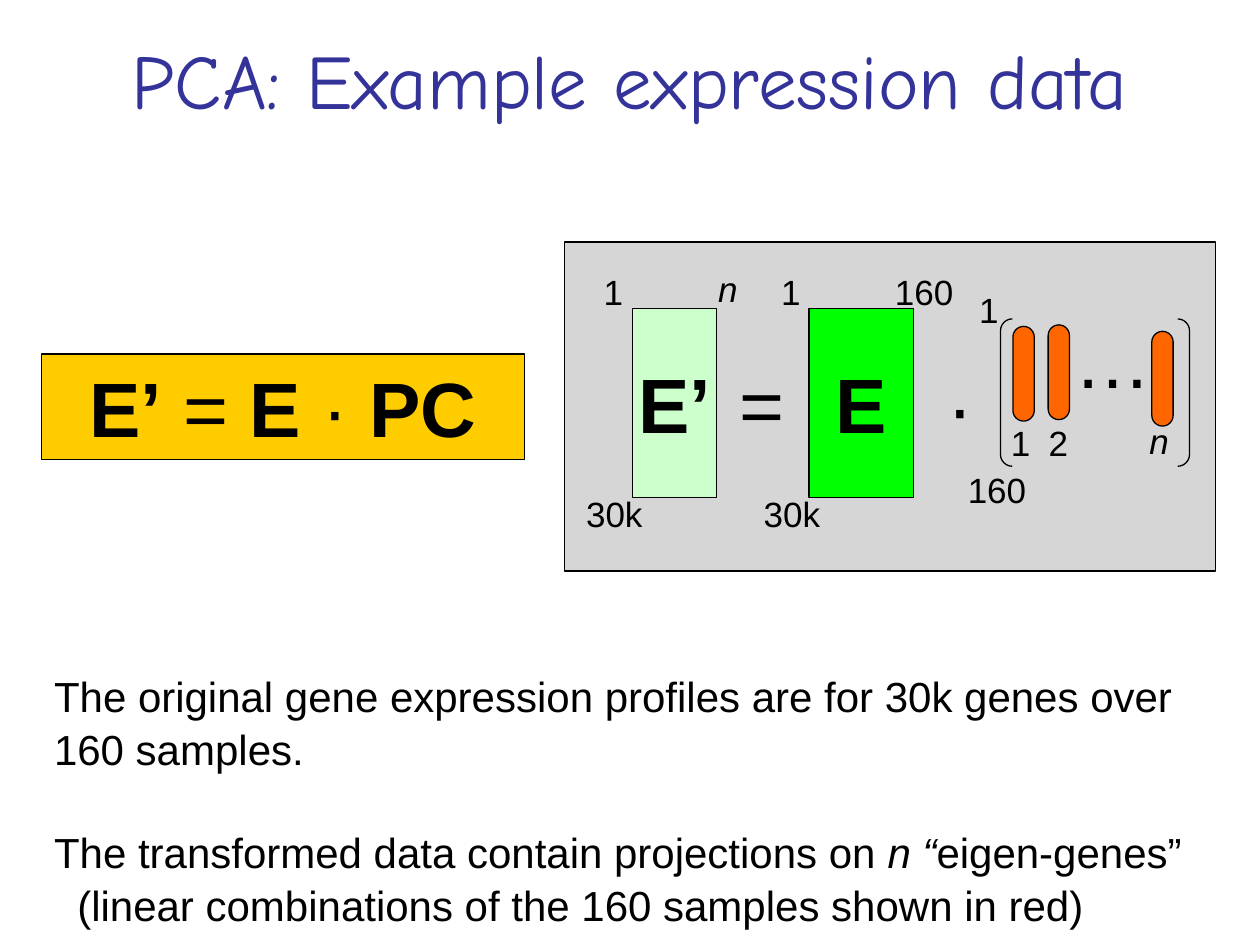
from lxml import etree
from pptx import Presentation
from pptx.dml.color import RGBColor
from pptx.enum.shapes import MSO_SHAPE
from pptx.enum.text import MSO_ANCHOR, MSO_AUTO_SIZE, PP_ALIGN
from pptx.oxml.ns import qn
from pptx.util import Cm, Pt

RECTANGLE = MSO_SHAPE.RECTANGLE
ROUNDED = MSO_SHAPE.ROUNDED_RECTANGLE
BRACKETS = MSO_SHAPE.DOUBLE_BRACKET
TOP, MIDDLE = MSO_ANCHOR.TOP, MSO_ANCHOR.MIDDLE
GROW, FIXED = MSO_AUTO_SIZE.SHAPE_TO_FIT_TEXT, MSO_AUTO_SIZE.NONE
LEFT, CENTER = PP_ALIGN.LEFT, PP_ALIGN.CENTER

COLORS = {
    "title": "333399", "ink": "000000", "panel": "808080", "formula": "FFCC00",
    "data": "00FF00", "projection": "CCFFCC", "component": "FF6600",
}
BOLD, ITALIC, PLAIN = {"bold": True}, {"italic": True}, {}
LARGE, SMALL = 44, 20


class SlideBuilder:
    """Holds the text style, the slide and the container that new shapes go to."""

    def __init__(self, slide, font="Arial"):
        self.slide = slide
        self.font = font
        self.shapes = slide.shapes

    def start_group(self):
        self.shapes = self.slide.shapes.add_group_shape().shapes

    def end_group(self):
        self.shapes = self.slide.shapes

    def add_runs(self, paragraph, runs, size, align=CENTER, font=None, color="ink"):
        """Add (text, format) runs; a line feed in a text becomes a line break."""
        paragraph.alignment = align
        for text, format_values in runs:
            for index, line in enumerate(text.split("\n")):
                if index:
                    paragraph.add_line_break()
                run = paragraph.add_run()
                run.text = line
                values = {"name": font or self.font, "size": Pt(size), **format_values}
                for name, value in values.items():
                    setattr(run.font, name, value)
                run.font.color.rgb = RGBColor.from_string(COLORS[color])

    def set_frame(self, shape, **values):
        for name, value in values.items():
            setattr(shape.text_frame, name, value)

    def title(self, text, left, top, width, height):
        shape = self.slide.shapes.title
        place = {"left": left, "top": top, "width": width, "height": height}
        for name, value in place.items():
            setattr(shape, name, Cm(value))
        self.set_frame(shape, vertical_anchor=MIDDLE, word_wrap=True, auto_size=FIXED)
        self.add_runs(shape.text_frame.paragraphs[0], [(text, PLAIN)], LARGE,
                      font="Comic Neue", color="title")

    def box(self, kind, left, top, width, height, fill=None, opacity=None, corner=None):
        shape = self.shapes.add_shape(kind, Cm(left), Cm(top), Cm(width), Cm(height))
        shape.shadow.inherit = False
        shape.line.color.rgb = RGBColor.from_string(COLORS["ink"])
        shape.line.width = Pt(0.75)
        if corner is not None:
            shape.adjustments[0] = corner
        if fill is None:
            shape.fill.background()
            return shape
        shape.fill.solid()
        shape.fill.fore_color.rgb = RGBColor.from_string(COLORS[fill])
        if opacity is not None:
            color = shape.element.spPr.find(qn("a:solidFill"))[0]
            etree.SubElement(color, qn("a:alpha")).set("val", str(opacity * 1000))
        return shape

    def matrix(self, name, left, width, fill):
        shape = self.box(RECTANGLE, left, 6.22, width, 3.81, fill)
        self.set_frame(shape, vertical_anchor=MIDDLE, word_wrap=False)
        self.add_runs(shape.text_frame.paragraphs[0], [(name, BOLD)], LARGE)

    def label(self, text, left, top, width=0.91, size=SMALL, format_values=PLAIN):
        height = 1.1 if size == SMALL else 2.11
        shape = self.shapes.add_textbox(Cm(left), Cm(top), Cm(width), Cm(height))
        self.set_frame(shape, word_wrap=False, auto_size=GROW)
        self.add_runs(shape.text_frame.paragraphs[0], [(text, format_values)], size)

    def body(self, paragraphs, left, top, width, height, size=24):
        shape = self.shapes.add_textbox(Cm(left), Cm(top), Cm(width), Cm(height))
        frame = shape.text_frame
        self.set_frame(shape, word_wrap=True, auto_size=GROW)
        for index, (runs, hanging) in enumerate(paragraphs):
            paragraph = frame.add_paragraph() if index else frame.paragraphs[0]
            self.add_runs(paragraph, runs, size, LEFT)
            paragraph.line_spacing = 1.05
            paragraph.space_before = Pt(29 if index else 0)
            if hanging:
                properties = paragraph._p.get_or_add_pPr()
                properties.set("marL", str(Cm(hanging)))
                properties.set("indent", str(-Cm(hanging)))


def main():
    presentation = Presentation()
    presentation.slide_width, presentation.slide_height = Cm(25.4), Cm(19.05)
    slide = presentation.slides.add_slide(presentation.slide_layouts[5])
    builder = SlideBuilder(slide)
    builder.title("PCA: Example expression data", 0, 0, 25.4, 3.18)
    builder.box(RECTANGLE, 11.38, 4.88, 13.13, 6.63, "panel", opacity=32)

    formula = builder.box(RECTANGLE, 0.84, 7.14, 9.73, 2.13, "formula")
    builder.set_frame(formula, vertical_anchor=TOP, word_wrap=True, auto_size=GROW)
    builder.add_runs(
        formula.text_frame.paragraphs[0],
        [("E’", BOLD), (" = ", PLAIN), ("E ", BOLD), ("·", PLAIN), (" PC", BOLD)],
        LARGE)

    # Original data matrix with its dimensions
    builder.start_group()
    builder.matrix("E", 16.31, 2.11, "data")
    builder.label("160", 17.78, 5.33, 1.7)
    builder.label("1", 15.49, 5.33)
    builder.label("30k", 15.14, 9.8, 1.65)
    builder.end_group()

    # Projected matrix and the operators
    builder.label("=", 14.66, 7.06, 1.42, LARGE)
    builder.label("·", 18.85, 7.11, 0.94, LARGE)
    builder.matrix("E’", 12.75, 1.7, "projection")
    builder.label("n", 14.22, 5.26, format_values=ITALIC)
    builder.label("1", 11.91, 5.33)
    builder.label("30k", 11.56, 9.8, 1.65)

    builder.body([
        ([("The original gene expression profiles are for 30k genes over 160 samples.",
           PLAIN)], 0),
        ([("The transformed data contain projections on ", PLAIN), ("n “", ITALIC),
          ("eigen-genes”\n(linear combinations of the 160 samples shown in red)", PLAIN)],
         0.47),
    ], 0.84, 13.34, 24.56, 5.38)

    # Principal components
    builder.label("160", 19.25, 9.32, 1.7)
    builder.start_group()
    builder.box(BRACKETS, 20.17, 6.43, 3.81, 2.97, corner=0.08)
    for left, top in [(20.42, 6.58), (21.13, 6.55), (23.22, 6.68)]:
        builder.box(ROUNDED, left, top, 0.43, 1.91, "component", corner=0.5)
    builder.label("…", 21.41, 6.15, 2.06, LARGE)
    builder.label("n", 22.91, 8.33, format_values=ITALIC)
    for text, left, top in [("1", 20.12, 8.38), ("2", 20.88, 8.38), ("1", 19.48, 5.69)]:
        builder.label(text, left, top)
    builder.end_group()

    presentation.save("out.pptx")


if __name__ == "__main__":
    main()
